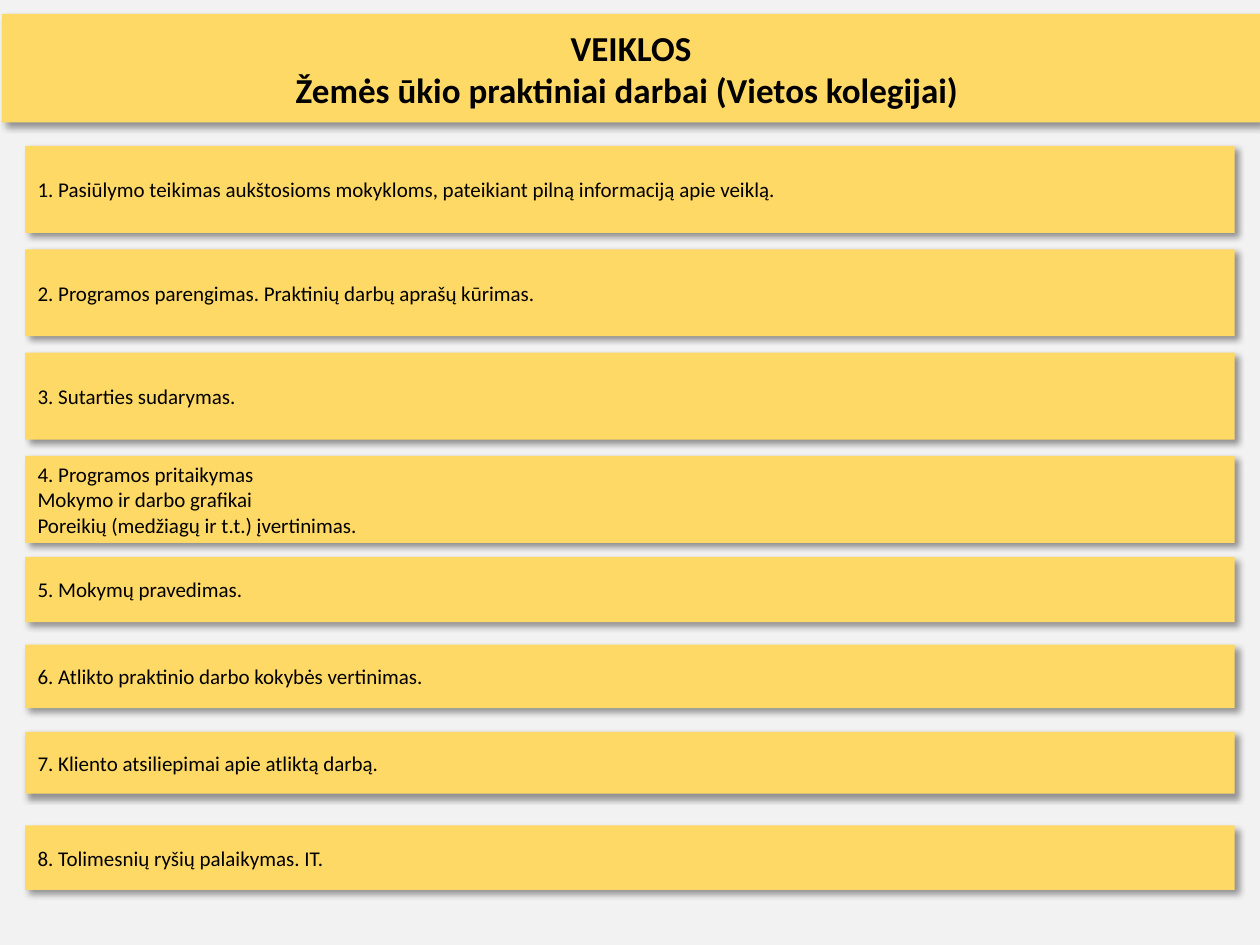
from dataclasses import dataclass

from lxml.etree import SubElement
from pptx import Presentation
from pptx.dml.color import RGBColor as Rgb
from pptx.enum.shapes import MSO_SHAPE as Form
from pptx.enum.text import MSO_ANCHOR as Anchor, PP_ALIGN as Align
from pptx.oxml.ns import qn
from pptx.util import Pt


@dataclass(frozen=True)
class Theme:
    back: str = "F2F2F2"
    fill: str = "FFD966"
    ink: str = "000000"
    font: str = "Calibri"
    head: int = 20
    body: int = 12


THEME = Theme()
TITLE = ["VEIKLOS", "Žemės ūkio praktiniai darbai (Vietos kolegijai) "]

# The first four steps are tall and evenly spaced.
TALL = [
    ["1. Pasiūlymo teikimas aukštosioms mokykloms, pateikiant pilną informaciją apie veiklą."],
    ["2. Programos parengimas. Praktinių darbų aprašų kūrimas."],
    ["3. Sutarties sudarymas."],
    [
        "4. Programos pritaikymas",
        "Mokymo ir darbo grafikai",
        "Poreikių (medžiagų ir t.t.) įvertinimas.",
    ],
]
TALL_TOP, TALL_STEP, TALL_HIGH = 83.4, 59.05, 49.7

# The last four steps: top, height, text.
LOW = [
    (318.3, 37.2, "5. Mokymų pravedimas."),
    (368.4, 36.3, "6. Atlikto praktinio darbo kokybės vertinimas."),
    (418.3, 35.2, "7. Kliento atsiliepimai apie atliktą darbą."),
    (471.7, 36.9, "8. Tolimesnių ryšių palaikymas. IT."),
]
LEFT, WIDE = 14.4, 691.2


def add_shade(shape):
    """Give the shape a soft shadow to the lower right."""
    shape.shadow.inherit = False
    effects = shape._element.spPr.find(qn("a:effectLst"))
    shade = SubElement(
        effects, qn("a:outerShdw"), blurRad=str(Pt(4)), dist=str(Pt(3)),
        dir=str(45 * 60000), algn="tl", rotWithShape="0",
    )
    tint = SubElement(shade, qn("a:srgbClr"), val=THEME.ink)
    SubElement(tint, qn("a:alpha"), val="40000")


def add_text(frame, lines, size, bold, align):
    frame.word_wrap = True
    frame.vertical_anchor = Anchor.MIDDLE
    for i, line in enumerate(lines):
        para = frame.add_paragraph() if i else frame.paragraphs[0]
        para.alignment = align
        run = para.add_run()
        run.text = line
        font = run.font
        font.name, font.size, font.bold = THEME.font, Pt(size), bold
        font.color.rgb = Rgb.from_string(THEME.ink)


def add_bar(slide, box, lines, size=THEME.body, bold=False, align=Align.LEFT):
    bar = slide.shapes.add_shape(Form.RECTANGLE, *map(Pt, box))
    bar.fill.solid()
    bar.fill.fore_color.rgb = Rgb.from_string(THEME.fill)
    bar.line.fill.background()
    add_shade(bar)
    add_text(bar.text_frame, lines, size, bold, align)


def main():
    deck = Presentation()
    deck.slide_width, deck.slide_height = Pt(720), Pt(540)
    slide = deck.slides.add_slide(deck.slide_layouts[6])
    back = slide.background.fill
    back.solid()
    back.fore_color.rgb = Rgb.from_string(THEME.back)

    add_bar(slide, (1.3, 8, 718.7, 62), TITLE, THEME.head, True, Align.CENTER)
    for i, lines in enumerate(TALL):
        add_bar(slide, (LEFT, TALL_TOP + i * TALL_STEP, WIDE, TALL_HIGH), lines)
    for top, high, line in LOW:
        add_bar(slide, (LEFT, top, WIDE, high), [line])

    deck.save("out.pptx")


if __name__ == "__main__":
    main()
